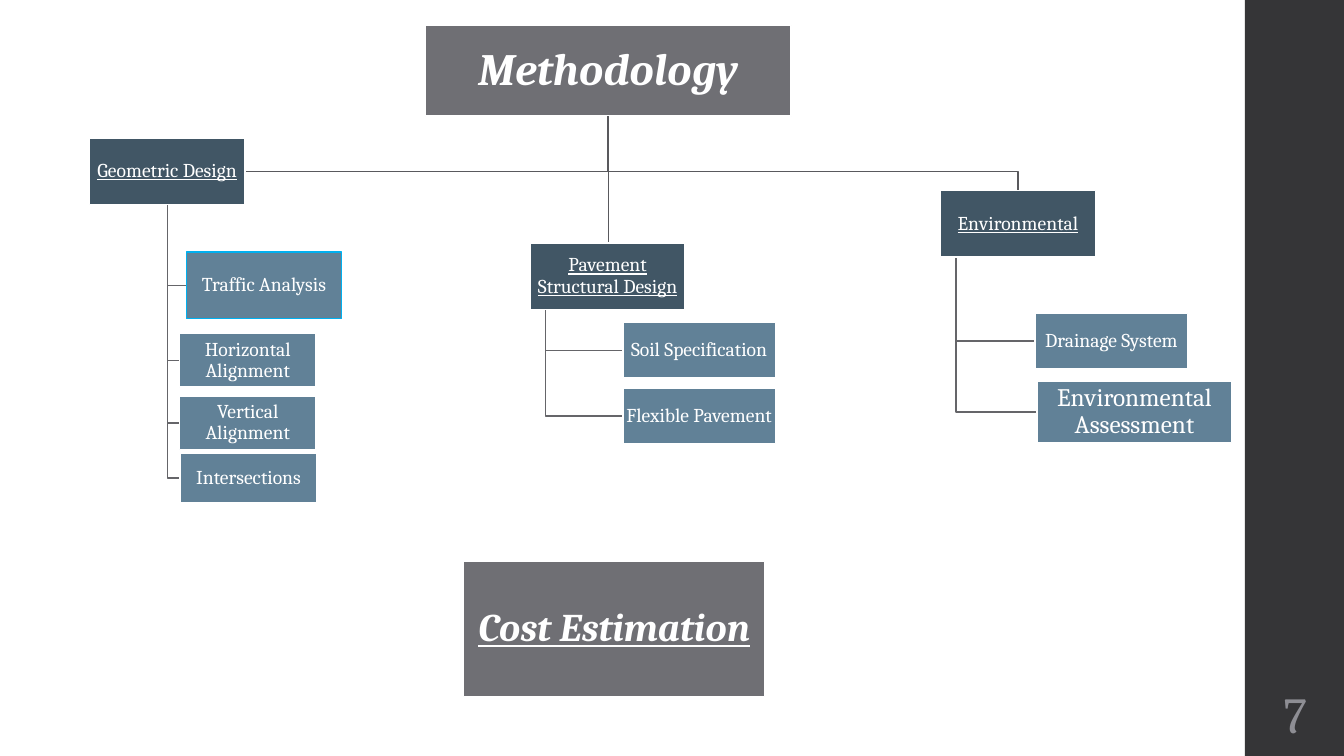
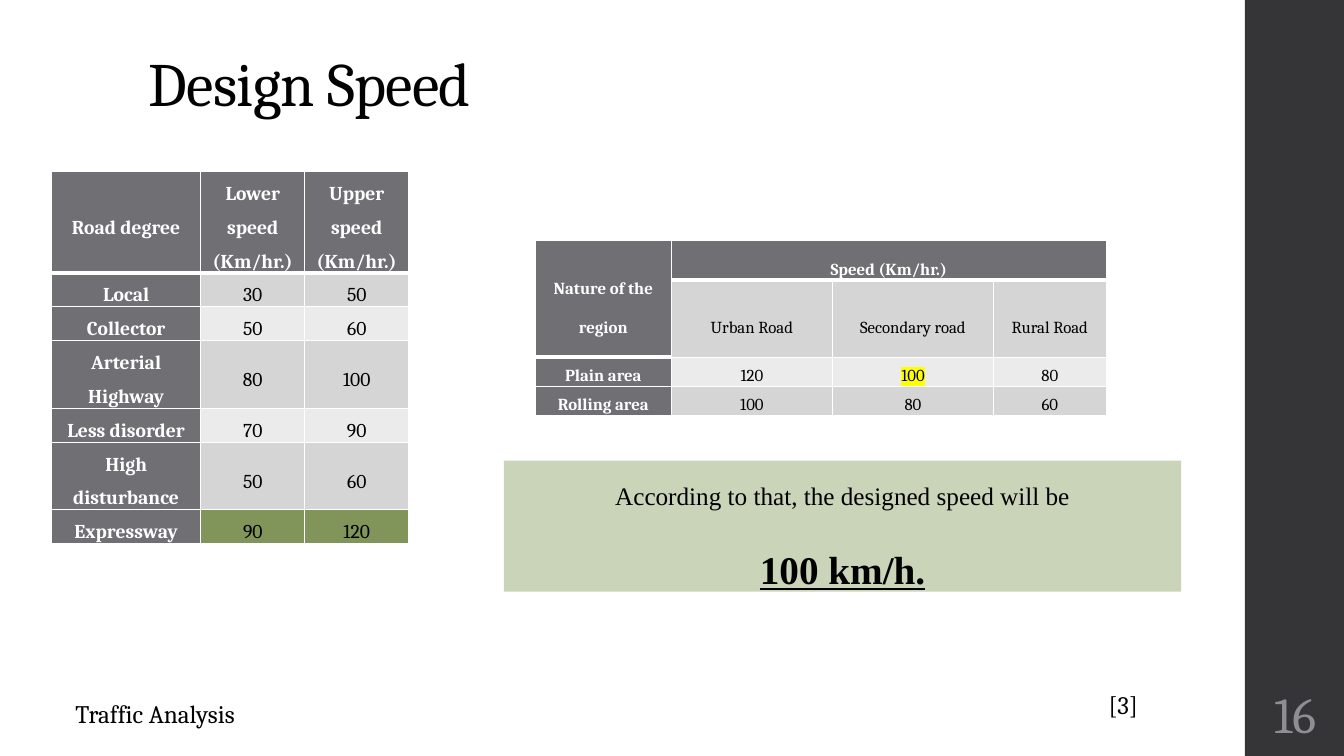
"""Build two slides on road design: a methodology chart and the design speed tables."""
import dataclasses

import lxml.etree
import pptx
import pptx.dml.color
import pptx.enum.shapes
import pptx.enum.text
import pptx.oxml.ns
import pptx.util

Cm, Pt = pptx.util.Cm, pptx.util.Pt
RGB = pptx.dml.color.RGBColor.from_string
ALIGN = pptx.enum.text.PP_ALIGN
ANCHOR = pptx.enum.text.MSO_ANCHOR
RECT = pptx.enum.shapes.MSO_SHAPE.RECTANGLE
STRAIGHT = pptx.enum.shapes.MSO_CONNECTOR.STRAIGHT
qn = pptx.oxml.ns.qn


@dataclasses.dataclass(frozen=True)
class Theme:
    """Colours, fonts and type sizes of the deck."""
    serif: str = "Cambria"
    panel_font: str = "Times New Roman"
    black: str = "000000"
    white: str = "FFFFFF"
    band: str = "353537"
    number: str = "8E8E94"
    grey: str = "6F6F74"
    branch: str = "415665"
    leaf: str = "618197"
    accent: str = "00B0F0"
    trunk_wire: str = "59595D"
    leaf_wire: str = "656569"
    row_light: str = "EBEBEB"
    row_dark: str = "D5D5D6"
    green: str = "81955B"
    panel: str = "CAD4B8"
    highlight: str = "FFFF00"
    line: float = 1.1
    title: int = 44
    number_size: int = 36
    root: int = 32
    cost: int = 28
    body: int = 18
    node: int = 14
    small: int = 12


T = Theme()


def add_run(p, text, size, color=T.black, font=T.serif, bold=False, italic=False, underline=False):
    """Add one formatted run to a paragraph."""
    r = p.add_run()
    r.text = text
    f = r.font
    f.name, f.size, f.bold, f.italic, f.underline = font, Pt(size), bold, italic, underline
    f.color.rgb = RGB(color)
    return r


def set_frame(tf, anchor=ANCHOR.MIDDLE, inset=None):
    """Set wrapping, anchor and, when given, equal insets in cm."""
    tf.word_wrap = True
    tf.auto_size = pptx.enum.text.MSO_AUTO_SIZE.NONE
    tf.vertical_anchor = anchor
    if inset is not None:
        tf.margin_left = tf.margin_right = tf.margin_top = tf.margin_bottom = Cm(inset)


def place(sp, box):
    """Move and size a shape to a box in cm."""
    sp.left, sp.top, sp.width, sp.height = map(Cm, box)


def add_rect(s, box, fill, line=None):
    """Add a flat rectangle."""
    sp = s.shapes.add_shape(RECT, *map(Cm, box))
    sp.shadow.inherit = False
    paint(sp, fill, line)
    return sp


def paint(sp, fill, line=None):
    """Set the fill and outline of a shape."""
    sp.fill.solid()
    sp.fill.fore_color.rgb = RGB(fill)
    if line:
        sp.line.color.rgb = RGB(line)
        sp.line.width = Pt(T.line)
    else:
        sp.line.fill.background()


def add_label(s, box, text, size, color=T.black, align=ALIGN.LEFT, inset=None):
    """Add a one-line text box."""
    tf = s.shapes.add_textbox(*map(Cm, box)).text_frame
    set_frame(tf, inset=inset)
    p = tf.paragraphs[0]
    p.alignment = align
    add_run(p, text, size, color)


def write_node(sp, text, size, inset=0.03, **style):
    """Write centred white text in a chart node."""
    set_frame(sp.text_frame, inset=inset)
    p = sp.text_frame.paragraphs[0]
    p.alignment, p.line_spacing = ALIGN.CENTER, 0.9
    add_run(p, text, size, T.white, **style)


def add_node(s, box, text, fill, size=T.node, line=T.white, **style):
    """Add a chart node."""
    write_node(add_rect(s, box, fill, line), text, size, **style)


def add_wire(s, points, color):
    """Draw a bent or straight wire through points in cm."""
    pts = [(Cm(x), Cm(y)) for x, y in points]
    if len(pts) == 2:
        sp = s.shapes.add_connector(STRAIGHT, *pts[0], *pts[1])
        lxml.etree.SubElement(sp.element.spPr, qn("a:effectLst"))
    else:
        fb = s.shapes.build_freeform(*pts[0])
        fb.add_line_segments(pts[1:], close=False)
        sp = fb.convert_to_shape()
        sp.shadow.inherit = False
        sp.fill.background()
    sp.line.color.rgb = RGB(color)
    sp.line.width = Pt(T.line)


def add_band(s, layout):
    """Place the dark side band on the layout."""
    band = add_rect(s, (31.37, 0, 2.5, 19.05), T.band)
    band.element.nvSpPr.cNvPr.set("id", "99")
    layout.shapes.element.insert(2, band.element)


def add_branch(s, box, text, spine, leaves):
    """Add a branch box and its leaves, placed relative to the box."""
    x, y, w, h = box
    for dx, dy, lw, lh, *_ in leaves:
        mid = y + dy + lh / 2
        add_wire(s, [(x + spine, y + h), (x + spine, mid), (x + dx, mid)], T.leaf_wire)
    add_node(s, box, text, T.branch, underline=True)
    for dx, dy, lw, lh, label, style in leaves:
        add_node(s, (x + dx, y + dy, lw, lh), label, T.leaf, **style)


def add_methodology(s, number):
    """Build the methodology chart slide."""
    root = (10.72, 0.64, 9.22, 2.29)
    geometric, pavement, environment = [
        (x, y, 3.91, 1.68) for x, y in ((2.26, 3.48), (13.36, 6.12), (23.7, 4.8))]
    title = s.shapes.title
    place(title, root)
    paint(title, T.grey, T.white)
    write_node(title, "Methodology", T.root, 0.05, bold=True, italic=True)

    cx, bottom = root[0] + root[2] / 2, root[1] + root[3]
    level = geometric[1] + geometric[3] / 2
    end = environment[0] + environment[2] / 2
    start = [(cx, bottom), (cx, level)]
    add_wire(s, start + [(geometric[0] + geometric[2], level)], T.trunk_wire)
    add_wire(s, start + [(end, level), (end, environment[1])], T.trunk_wire)
    add_wire(s, [(cx, bottom), (cx, pavement[1])], T.trunk_wire)

    add_branch(s, geometric, "Geometric Design", 1.96, [
        (2.44, 2.87, 3.91, 1.68, "Traffic Analysis", {"line": T.accent}),
        (2.26, 4.93, 3.45, 1.35, "Horizontal Alignment", {}),
        (2.26, 6.5, 3.45, 1.35, "Vertical Alignment", {}),
        (2.28, 7.95, 3.45, 1.24, "Intersections", {})])
    add_branch(s, pavement, "Pavement Structural Design", 0.39, [
        (2.34, 2.01, 3.84, 1.4, "Soil Specification", {}),
        (2.34, 3.66, 3.84, 1.4, "Flexible Pavement", {})])
    add_branch(s, environment, "Environmental", 0.39, [
        (2.39, 3.1, 3.84, 1.4, "Drainage System", {}),
        (2.44, 4.8, 4.9, 1.55, "Environmental Assessment", {"size": T.body})])
    add_node(s, (11.68, 14.15, 7.59, 3.4), "Cost Estimation", T.grey, T.cost,
             inset=0.05, bold=True, italic=True, underline=True)
    add_number(s, number)


def add_number(s, number):
    """Add the page number on the side band."""
    add_label(s, (31.37, 17.15, 2.54, 1.65), number, T.number_size, T.number, ALIGN.CENTER, 0.13)


def set_borders(cell, top, bottom):
    """Give a cell white borders with the given top and bottom widths in points."""
    tcPr = cell._tc.get_or_add_tcPr()
    for side, width in (("L", 1), ("R", 1), ("T", top), ("B", bottom)):
        ln = lxml.etree.SubElement(tcPr, qn("a:ln" + side), w=str(Pt(width)))
        fill = lxml.etree.SubElement(ln, qn("a:solidFill"))
        lxml.etree.SubElement(fill, qn("a:srgbClr"), val=T.white)


def add_grid(s, origin, cols, heights, rows, size, spacing, thick, merges=(), fills=None, marked=()):
    """Add a table at the origin; thick lists the cells with a heavy lower edge."""
    fills = fills or {}
    box = (*origin, sum(cols), sum(heights))
    table = s.shapes.add_table(len(rows), len(cols), *map(Cm, box)).table
    table.horz_banding = False
    for col, width in zip(table.columns, cols):
        col.width = Cm(width)
    for row, height in zip(table.rows, heights):
        row.height = Cm(height)
    for first, last in merges:
        table.cell(*first).merge(table.cell(*last))
    for i, texts in enumerate(rows):
        for j, text in enumerate(texts):
            cell = table.cell(i, j)
            head = i == 0 or j == 0
            set_borders(cell, 3 if (i - 1, j) in thick else 1, 3 if (i, j) in thick else 1)
            cell.fill.solid()
            band = T.grey if head else T.row_dark if i % 2 else T.row_light
            cell.fill.fore_color.rgb = RGB(fills.get((i, j), band))
            cell.vertical_anchor = ANCHOR.MIDDLE
            cell.margin_left = cell.margin_right = Cm(0.18)
            cell.margin_top = cell.margin_bottom = 0
            if not text:
                continue
            p = cell.text_frame.paragraphs[0]
            p.alignment, p.line_spacing = ALIGN.CENTER, spacing[i]
            r = add_run(p, text, size, T.white if head else T.black, bold=head)
            if (i, j) in marked:
                mark = lxml.etree.Element(qn("a:highlight"))
                lxml.etree.SubElement(mark, qn("a:srgbClr"), val=T.highlight)
                r.font._element.find(qn("a:solidFill")).addnext(mark)


def add_conclusion(s, box):
    """Add the green panel with the chosen speed."""
    tf = add_rect(s, box, T.panel).text_frame
    set_frame(tf, ANCHOR.TOP)
    lines = (("According to that, the designed speed will be", T.body, False),
             ("100 km/h.", T.cost, True))
    for i, (text, size, strong) in enumerate(lines):
        p = tf.add_paragraph() if i else tf.paragraphs[0]
        p.alignment, p.line_spacing, p.space_after = ALIGN.CENTER, 1.5, Pt(8)
        add_run(p, text, size, font=T.panel_font, bold=strong, underline=strong)


def add_design_speed(s, number):
    """Build the design speed slide."""
    title = s.shapes.title
    place(title, (3.5, 1.02, 26.92, 2.13))
    set_frame(title.text_frame, ANCHOR.BOTTOM)
    p = title.text_frame.paragraphs[0]
    p.alignment, p.line_spacing = ALIGN.LEFT, 0.9
    r = add_run(p, "Design Speed", T.title)
    r.font._element.set("spc", "-50")

    degrees = [("Road degree", "Lower speed (Km/hr.)", "Upper speed (Km/hr.)"),
               ("Local", "30", "50"), ("Collector", "50", "60"),
               ("Arterial Highway", "80", "100"), ("Less disorder", "70", "90"),
               ("High disturbance", "50", "60"), ("Expressway", "90", "120")]
    add_grid(s, (1.3, 4.32), (3.76, 2.62, 2.62), (2.54, 0.85, 0.85, 1.7, 0.85, 1.7, 0.85),
             degrees, T.node, [1.5] * 7, {(0, j) for j in range(3)},
             fills={(6, 1): T.green, (6, 2): T.green})
    regions = [("Nature of the region", "Speed (Km/hr.)", "", ""),
               ("", "Urban Road", "Secondary road", "Rural Road"),
               ("Plain area", "120", "100", "80"), ("Rolling area", "100", "80", "60")]
    add_grid(s, (13.49, 6.07), (3.43, 4.06, 4.06, 2.84), (0.98, 1.95, 0.73, 0.73),
             regions, T.small, (2, 2, 1.5, 1.5), {(1, 0), *((0, j) for j in range(4))},
             merges=[((0, 0), (1, 0)), ((0, 1), (0, 3))], marked=[(2, 2)])
    add_conclusion(s, (12.7, 11.61, 17.07, 3.3))
    add_label(s, (1.65, 17.4, 9.17, 1.14), "Traffic Analysis", T.body)
    add_label(s, (27.69, 17.17, 1.4, 1.14), "[3]", T.body)
    add_number(s, number)


def main():
    """Build and save the deck."""
    prs = pptx.Presentation()
    prs.slide_width, prs.slide_height = Cm(33.87), Cm(19.05)
    layout = prs.slide_layouts[5]
    for i, (build, number) in enumerate(((add_methodology, "7"), (add_design_speed, "16"))):
        s = prs.slides.add_slide(layout)
        if i == 0:
            add_band(s, layout)
        build(s, number)
    prs.save("out.pptx")


if __name__ == "__main__":
    main()
